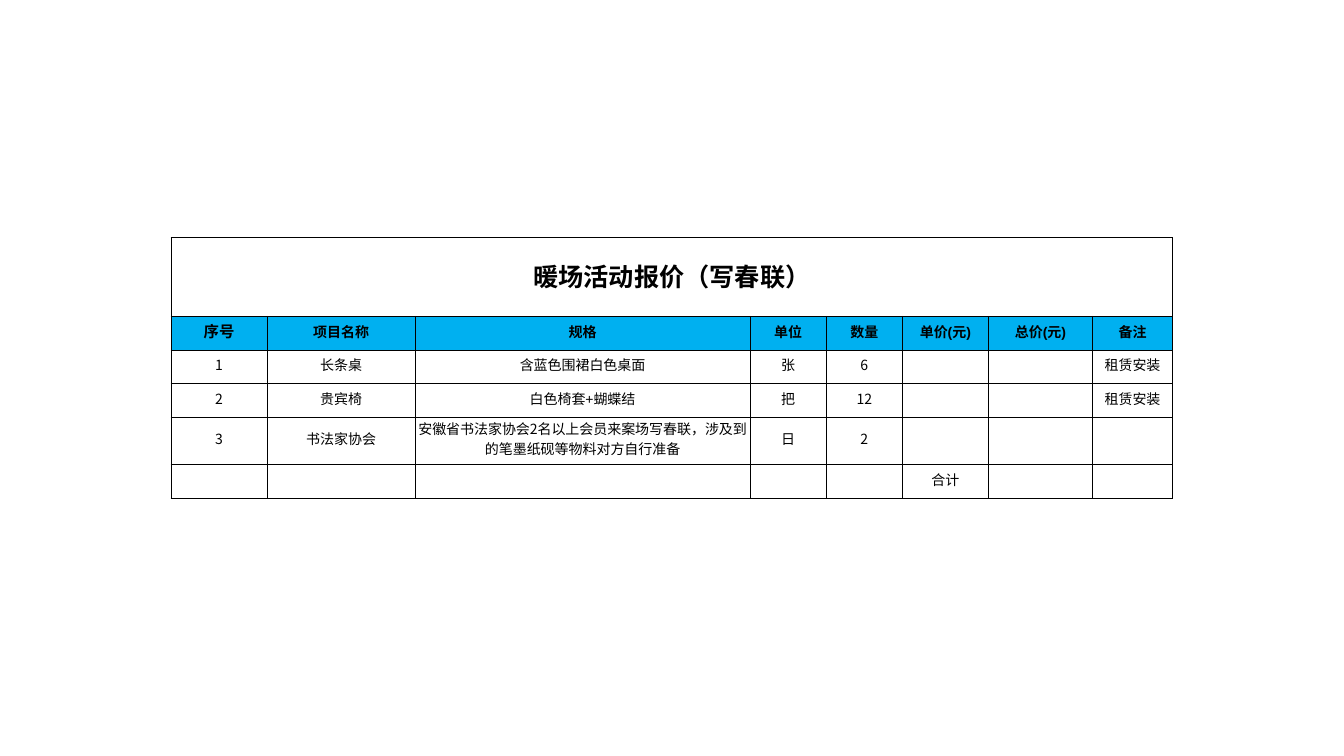
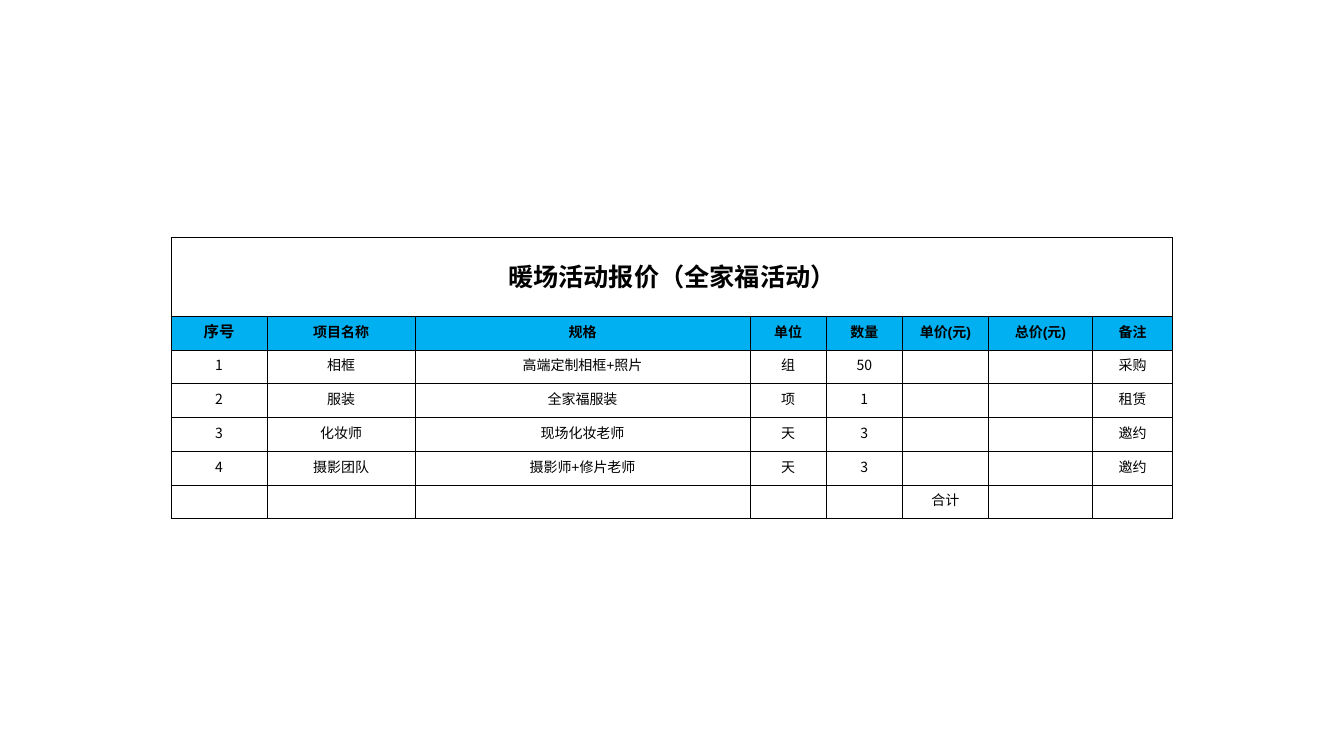
from lxml.etree import SubElement
from pptx import Presentation
from pptx.dml.color import RGBColor
from pptx.enum.text import MSO_ANCHOR, PP_ALIGN
from pptx.oxml.ns import qn
from pptx.util import Cm, Pt

COLORS = {"ink": "000000", "header": "00B0F0", "paper": "FFFFFF"}
LATIN_FONT = "Arial"
CJK_FONT = "Noto Sans CJK SC"
BORDER_WIDTH = Pt(0.5)

CELL_FORMAT = {
    "margin_left": Cm(0.03),
    "margin_top": Cm(0.03),
    "margin_right": Cm(0.03),
    "margin_bottom": Cm(0.13),
    "vertical_anchor": MSO_ANCHOR.MIDDLE,
}
TITLE_FONT = {"size": Pt(18), "bold": True}
NUMBER_HEADER_FONT = {"size": Pt(11), "bold": True}
HEADER_FONT = {"size": Pt(10), "bold": True}
BODY_FONT = {"size": Pt(10), "bold": False}

TABLE_LEFT, TABLE_TOP = Cm(4.31), Cm(5.99)
COLUMN_WIDTHS = [Cm(w) for w in (2.42, 3.73, 8.44, 1.92, 1.92, 2.17, 2.62, 2.02)]
TITLE_HEIGHT, ROW_HEIGHT = Cm(1.98), Cm(0.85)

HEADERS = ["序号", "项目名称", "规格", "单位", "数量", "单价(元)", "总价(元)", "备注"]
TOTAL_ROW = ["", "", "", "", "", "合计", "", ""]

# Each item: name, specification, unit, quantity, remark
QUOTES = {
    "暖场活动报价（写春联）": [
        ("长条桌", "含蓝色围裙白色桌面", "张", "6", "租赁安装"),
        ("贵宾椅", "白色椅套+蝴蝶结", "把", "12", "租赁安装"),
        (
            "书法家协会",
            "安徽省书法家协会2名以上会员来案场写春联，涉及到的笔墨纸砚等物料对方自行准备",
            "日",
            "2",
            "",
        ),
    ],
    "暖场活动报价（全家福活动）": [
        ("相框", "高端定制相框+照片", "组", "50", "采购"),
        ("服装", "全家福服装", "项", "1", "租赁"),
        ("化妆师", "现场化妆老师", "天", "3", "邀约"),
        ("摄影团队", "摄影师+修片老师", "天", "3", "邀约"),
    ],
}


def apply_format(target, values):
    for name, value in values.items():
        setattr(target, name, value)


def add_borders(cell):
    properties = cell._tc.get_or_add_tcPr()
    for side in ("lnL", "lnR", "lnT", "lnB"):
        line = SubElement(properties, qn(f"a:{side}"), w=str(BORDER_WIDTH))
        fill = SubElement(line, qn("a:solidFill"))
        SubElement(fill, qn("a:srgbClr"), val=COLORS["ink"])


def write_text(cell, text, font_format):
    """Write centred text; an empty cell only gets its font size."""
    paragraph = cell.text_frame.paragraphs[0]
    paragraph.alignment = PP_ALIGN.CENTER
    if not text:
        size = round(font_format["size"].pt * 100)
        SubElement(paragraph._p, qn("a:endParaRPr"), sz=str(size))
        return
    run = paragraph.add_run()
    run.text = text
    apply_format(run.font, font_format)
    run.font.color.rgb = RGBColor.from_string(COLORS["ink"])
    has_digit = any(character.isdigit() for character in text)
    run.font.name = CJK_FONT if has_digit else LATIN_FONT
    SubElement(run._r.get_or_add_rPr(), qn("a:ea"), typeface=CJK_FONT)


def fill_row(row, texts, fonts, color):
    for cell, text, font_format in zip(row.cells, texts, fonts):
        apply_format(cell, CELL_FORMAT)
        add_borders(cell)
        cell.fill.solid()
        cell.fill.fore_color.rgb = RGBColor.from_string(COLORS[color])
        write_text(cell, text, font_format)


def add_title_row(table, title):
    row = table.rows[0]
    row.height = TITLE_HEIGHT
    row.cells[0].merge(row.cells[len(HEADERS) - 1])
    for cell in row.cells:
        add_borders(cell)
        cell.fill.background()
    apply_format(row.cells[0], CELL_FORMAT)
    write_text(row.cells[0], title, TITLE_FONT)


def add_quote_table(slide, title, items):
    item_rows = [
        [str(number), name, specification, unit, quantity, "", "", remark]
        for number, (name, specification, unit, quantity, remark) in enumerate(items, 1)
    ]
    body_rows = item_rows + [TOTAL_ROW]
    row_count = len(body_rows) + 2
    table = slide.shapes.add_table(
        row_count,
        len(HEADERS),
        TABLE_LEFT,
        TABLE_TOP,
        sum(COLUMN_WIDTHS),
        TITLE_HEIGHT + ROW_HEIGHT * (row_count - 1),
    ).table
    apply_format(table, {"first_row": False, "horz_banding": False})
    for column, width in zip(table.columns, COLUMN_WIDTHS):
        column.width = width
    for row in table.rows:
        row.height = ROW_HEIGHT

    add_title_row(table, title)
    header_fonts = [NUMBER_HEADER_FONT] + [HEADER_FONT] * (len(HEADERS) - 1)
    fill_row(table.rows[1], HEADERS, header_fonts, "header")
    for index, texts in enumerate(body_rows, 2):
        fill_row(table.rows[index], texts, [BODY_FONT] * len(HEADERS), "paper")


def main():
    presentation = Presentation()
    presentation.slide_width = Cm(33.87)
    presentation.slide_height = Cm(19.05)
    blank_layout = presentation.slide_layouts[6]
    for title, items in QUOTES.items():
        add_quote_table(presentation.slides.add_slide(blank_layout), title, items)
    presentation.save("out.pptx")


if __name__ == "__main__":
    main()
